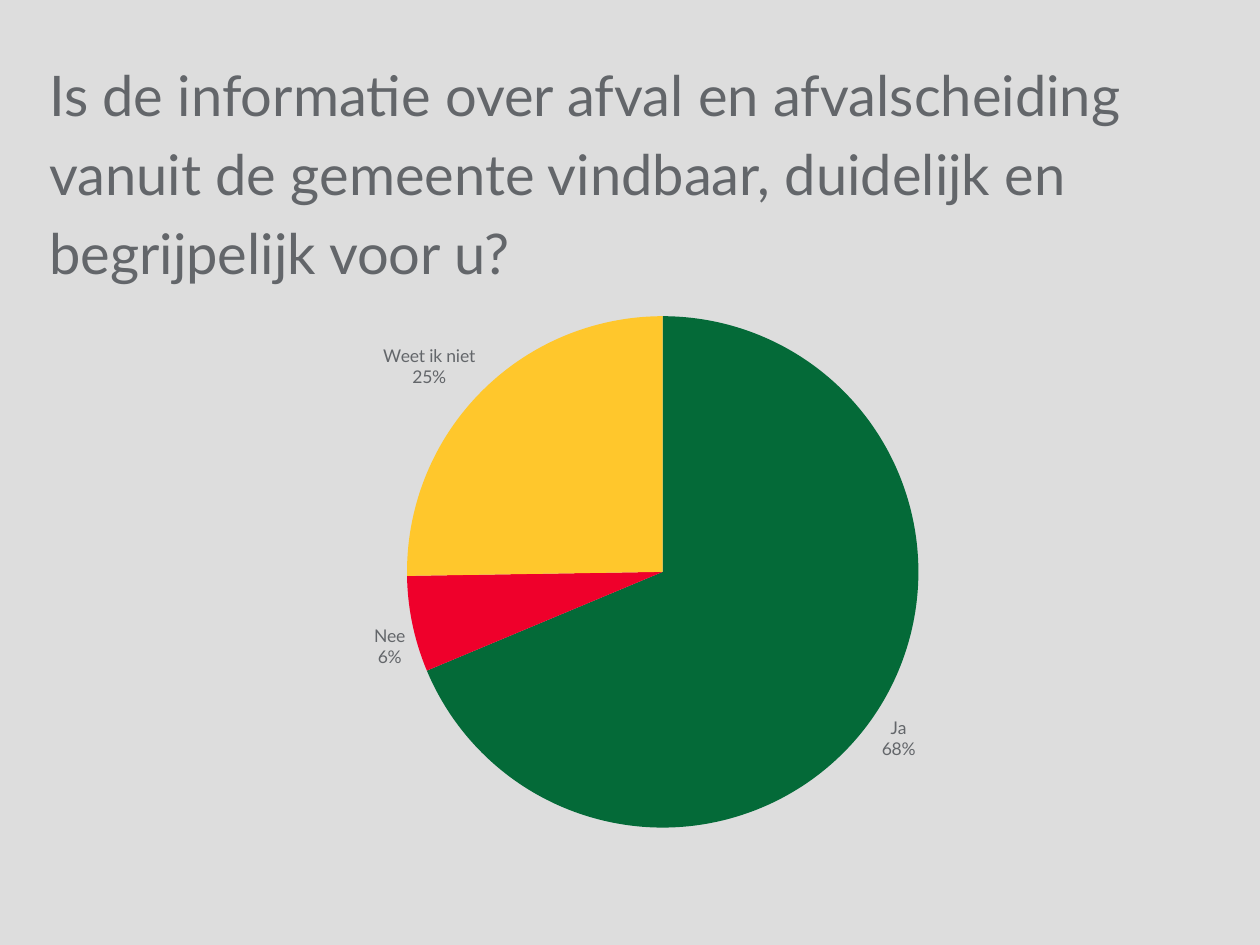
from dataclasses import dataclass

from lxml import etree
from pptx import Presentation
from pptx.chart.data import CategoryChartData
from pptx.dml.color import RGBColor
from pptx.enum.chart import XL_CHART_TYPE, XL_LABEL_POSITION
from pptx.enum.text import MSO_ANCHOR
from pptx.oxml.ns import qn
from pptx.util import Inches, Pt

PIE = XL_CHART_TYPE.PIE
OUTSIDE_END = XL_LABEL_POSITION.OUTSIDE_END
TOP = MSO_ANCHOR.TOP


@dataclass(frozen=True)
class Theme:
    background: RGBColor = RGBColor(0xDD, 0xDD, 0xDD)
    ink: RGBColor = RGBColor(0x63, 0x66, 0x6A)
    green: RGBColor = RGBColor(0x04, 0x6A, 0x38)
    red: RGBColor = RGBColor(0xEF, 0x00, 0x2B)
    yellow: RGBColor = RGBColor(0xFF, 0xC7, 0x2C)
    font: str = "Lato"
    question_size: Pt = Pt(32)
    question_leading: Pt = Pt(45)
    label_size: Pt = Pt(10)


@dataclass(frozen=True)
class Box:
    left: float
    top: float
    width: float
    height: float

    def lengths(self) -> tuple:
        return tuple(map(Inches, (self.left, self.top, self.width, self.height)))


@dataclass(frozen=True)
class Answer:
    label: str
    share: float
    color: RGBColor


THEME = Theme()
QUESTION = (
    "Is de informatie over afval en afvalscheiding vanuit de gemeente "
    "vindbaar, duidelijk en begrijpelijk voor u?"
)
ANSWERS = (
    Answer("Ja", 0.68, THEME.green),
    Answer("Nee", 0.06, THEME.red),
    Answer("Weet ik niet", 0.25, THEME.yellow),
)
QUESTION_BOX = Box(0.39, 0.39, 9.21, 1.18)
CHART_BOX = Box(0.58, 2.28, 9.02, 4.43)
PIE_BOX = Box(3.23, 2.51, 4.06, 4.06)


def set_all(target, values: dict) -> None:
    for name, value in values.items():
        setattr(target, name, value)


def style_font(font, size: Pt) -> None:
    set_all(font, {"name": THEME.font, "size": size, "bold": False})
    font.color.rgb = THEME.ink


def add_question(slide) -> None:
    frame = slide.shapes.add_textbox(*QUESTION_BOX.lengths()).text_frame
    set_all(frame, {
        "word_wrap": True, "vertical_anchor": TOP,
        "margin_left": 0, "margin_right": 0, "margin_top": 0, "margin_bottom": 0,
    })
    paragraph = frame.paragraphs[0]
    paragraph.line_spacing = THEME.question_leading
    question = paragraph.add_run()
    question.text = QUESTION
    style_font(question.font, THEME.question_size)


def place_pie(chart, frame: Box, pie: Box) -> None:
    plot_area = chart._chartSpace.find(".//" + qn("c:plotArea"))
    for old_layout in plot_area.findall(qn("c:layout")):
        plot_area.remove(old_layout)
    layout = etree.Element(qn("c:layout"))
    plot_area.insert(0, layout)
    manual = etree.SubElement(layout, qn("c:manualLayout"))
    settings = {
        "layoutTarget": "inner", "xMode": "edge", "yMode": "edge",
        "x": (pie.left - frame.left) / frame.width,
        "y": (pie.top - frame.top) / frame.height,
        "w": pie.width / frame.width,
        "h": pie.height / frame.height,
    }
    for tag, value in settings.items():
        etree.SubElement(manual, qn("c:" + tag)).set("val", str(value))


def label_slices(plot) -> None:
    plot.has_data_labels = True
    labels = plot.data_labels
    set_all(labels, {
        "show_category_name": True, "show_value": True, "show_percentage": False,
        "number_format": "0%", "number_format_is_linked": False,
        "position": OUTSIDE_END,
    })
    style_font(labels.font, THEME.label_size)
    separator = etree.Element(qn("c:separator"))
    separator.text = "\n"
    labels._element.find(qn("c:showBubbleSize")).addnext(separator)


def add_answer_chart(slide) -> None:
    answers = CategoryChartData(number_format="0%")
    answers.categories = [answer.label for answer in ANSWERS]
    answers.add_series("Series 1", [answer.share for answer in ANSWERS])
    chart = slide.shapes.add_chart(PIE, *CHART_BOX.lengths(), answers).chart
    set_all(chart, {"has_title": False, "has_legend": False})
    style_font(chart.font, THEME.label_size)
    plot = chart.plots[0]
    plot.vary_by_categories = True
    for index, answer in enumerate(ANSWERS):
        slice_format = plot.series[0].points[index].format
        slice_format.fill.solid()
        slice_format.fill.fore_color.rgb = answer.color
        slice_format.line.fill.background()
    label_slices(plot)
    place_pie(chart, CHART_BOX, PIE_BOX)


def main() -> None:
    deck = Presentation()
    set_all(deck, {"slide_width": Inches(10), "slide_height": Inches(7.5)})
    slide = deck.slides.add_slide(deck.slide_layouts[6])
    slide.background.fill.solid()
    slide.background.fill.fore_color.rgb = THEME.background
    add_question(slide)
    add_answer_chart(slide)
    deck.save("out.pptx")


if __name__ == "__main__":
    main()
